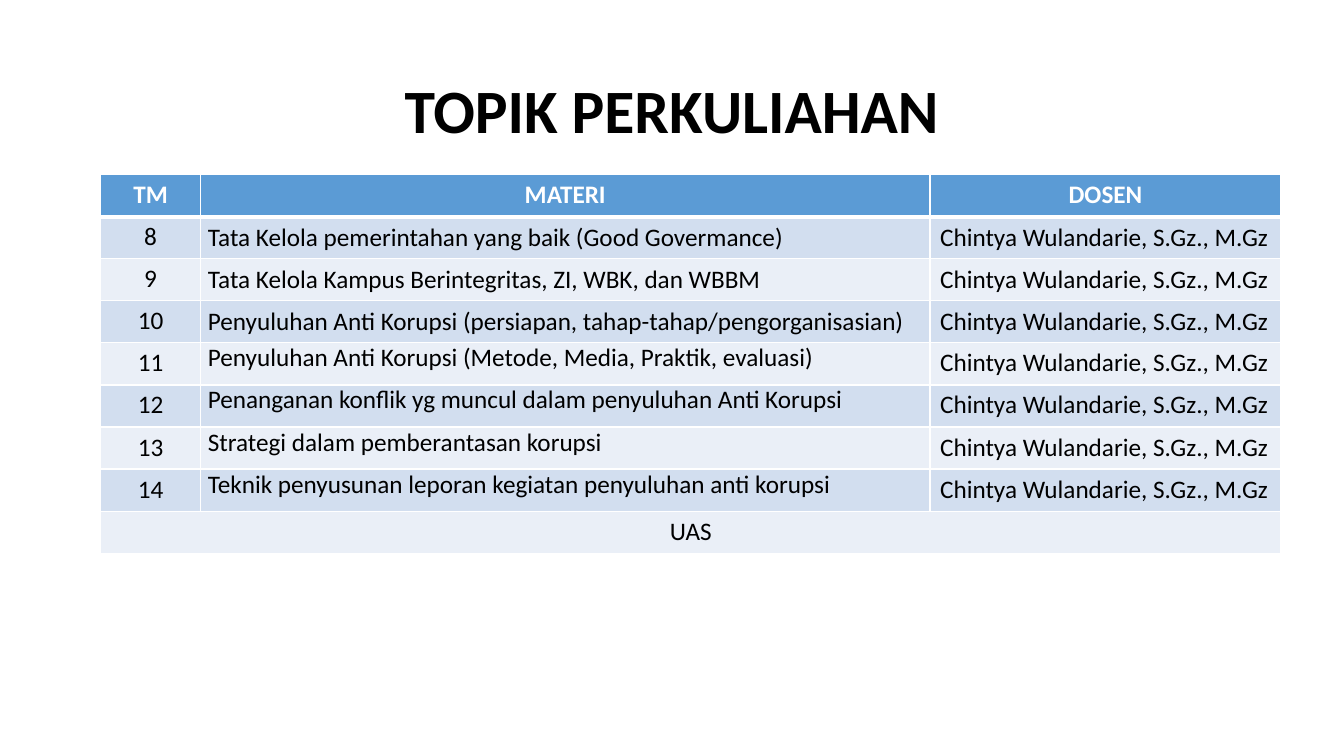
from lxml.etree import SubElement
from pptx import Presentation
from pptx.dml.color import RGBColor
from pptx.enum.text import MSO_ANCHOR as Anchor, PP_ALIGN as Align
from pptx.oxml.ns import qn
from pptx.util import Cm, Pt

TITLE_ONLY = 5
LECTURER = "Chintya Wulandarie, S.Gz., M.Gz"
HEADINGS = ("TM", "MATERI", "DOSEN")
FIRST_MEETING = 8
TOPICS = (
    "Tata Kelola pemerintahan yang baik (Good Govermance)",
    "Tata Kelola Kampus Berintegritas, ZI, WBK, dan WBBM",
    "Penyuluhan Anti Korupsi (persiapan, tahap-tahap/pengorganisasian)",
    "Penyuluhan Anti Korupsi (Metode, Media, Praktik, evaluasi)",
    "Penanganan konflik yg muncul dalam penyuluhan Anti Korupsi",
    "Strategi dalam pemberantasan korupsi",
    "Teknik penyusunan leporan kegiatan penyuluhan anti korupsi",
)
CENTRED_TOPICS = 3  # the first topics sit in the middle of their row
COLUMN_WIDTHS = (2.51, 18.39, 8.84)
ROW_HEIGHT = 1.06


def colour(code):
    return RGBColor.from_string(code)


class SlideBuilder:
    font = "Calibri"
    black, white = "000000", "FFFFFF"
    header_fill = "5B9BD5"
    bands = ("D2DEEF", "EAEFF7")

    def __init__(self, presentation):
        self.slide = presentation.slides.add_slide(
            presentation.slide_layouts[TITLE_ONLY])

    def add_text(self, paragraph, text, size, ink, bold=False, align=Align.LEFT):
        paragraph.alignment = align
        run = paragraph.add_run()
        run.text = text
        run.font.name = self.font
        run.font.size = Pt(size)
        run.font.bold = bold
        run.font.color.rgb = colour(ink)

    def title(self, text, left, top, width, height):
        heading = self.slide.shapes.title
        heading.left, heading.top = Cm(left), Cm(top)
        heading.width, heading.height = Cm(width), Cm(height)
        frame = heading.text_frame
        frame.vertical_anchor = Anchor.MIDDLE
        frame.paragraphs[0].line_spacing = 0.9
        self.add_text(frame.paragraphs[0], text, 44, self.black, True, Align.CENTER)

    def table(self, rows, left, top):
        schedule = self.slide.shapes.add_table(
            rows, len(COLUMN_WIDTHS), Cm(left), Cm(top),
            Cm(sum(COLUMN_WIDTHS)), Cm(rows * ROW_HEIGHT)).table
        for column, width in zip(schedule.columns, COLUMN_WIDTHS):
            column.width = Cm(width)
        for number, row in enumerate(schedule.rows):
            row.height = Cm(ROW_HEIGHT)
            for cell in row.cells:
                self.style_cell(cell, number)
        return schedule

    def style_cell(self, cell, row):
        """Give a cell its band colour and white borders, thick under the header."""
        widths = {"lnL": 1, "lnR": 1,
                  "lnT": 3 if row == 1 else 1, "lnB": 3 if row == 0 else 1}
        properties = cell._tc.get_or_add_tcPr()
        for side, width in widths.items():
            line = SubElement(properties, qn(f"a:{side}"), w=str(Pt(width)))
            solid = SubElement(line, qn("a:solidFill"))
            SubElement(solid, qn("a:srgbClr"), val=self.white)
        cell.fill.solid()
        fill = self.bands[(row - 1) % 2] if row else self.header_fill
        cell.fill.fore_color.rgb = colour(fill)

    def cell_text(self, cell, text, ink=black, bold=False, align=Align.LEFT,
                  anchor=Anchor.TOP):
        cell.vertical_anchor = anchor
        self.add_text(cell.text_frame.paragraphs[0], text, 18, ink, bold, align)


def main():
    presentation = Presentation()
    presentation.slide_width, presentation.slide_height = Cm(33.87), Cm(19.05)
    builder = SlideBuilder(presentation)
    builder.title("TOPIK PERKULIAHAN", 2.33, 1.01, 29.21, 3.68)

    schedule = builder.table(len(TOPICS) + 2, 2.54, 4.4)
    for column, heading in enumerate(HEADINGS):
        builder.cell_text(schedule.cell(0, column), heading, builder.white,
                          True, Align.CENTER)
    for row, topic in enumerate(TOPICS, start=1):
        meeting_cell, topic_cell, lecturer_cell = schedule.rows[row].cells
        anchor = Anchor.MIDDLE if row <= CENTRED_TOPICS else Anchor.TOP
        builder.cell_text(meeting_cell, str(FIRST_MEETING + row - 1),
                          align=Align.CENTER)
        topic_cell.margin_left = topic_cell.margin_right = Cm(0.19)
        topic_cell.margin_top = topic_cell.margin_bottom = 0
        builder.cell_text(topic_cell, topic, anchor=anchor)
        builder.cell_text(lecturer_cell, LECTURER, anchor=anchor)

    exam_row = len(TOPICS) + 1
    exam_cell = schedule.cell(exam_row, 0)
    exam_cell.merge(schedule.cell(exam_row, len(HEADINGS) - 1))
    builder.cell_text(exam_cell, "UAS", align=Align.CENTER)
    presentation.save("out.pptx")


if __name__ == "__main__":
    main()
